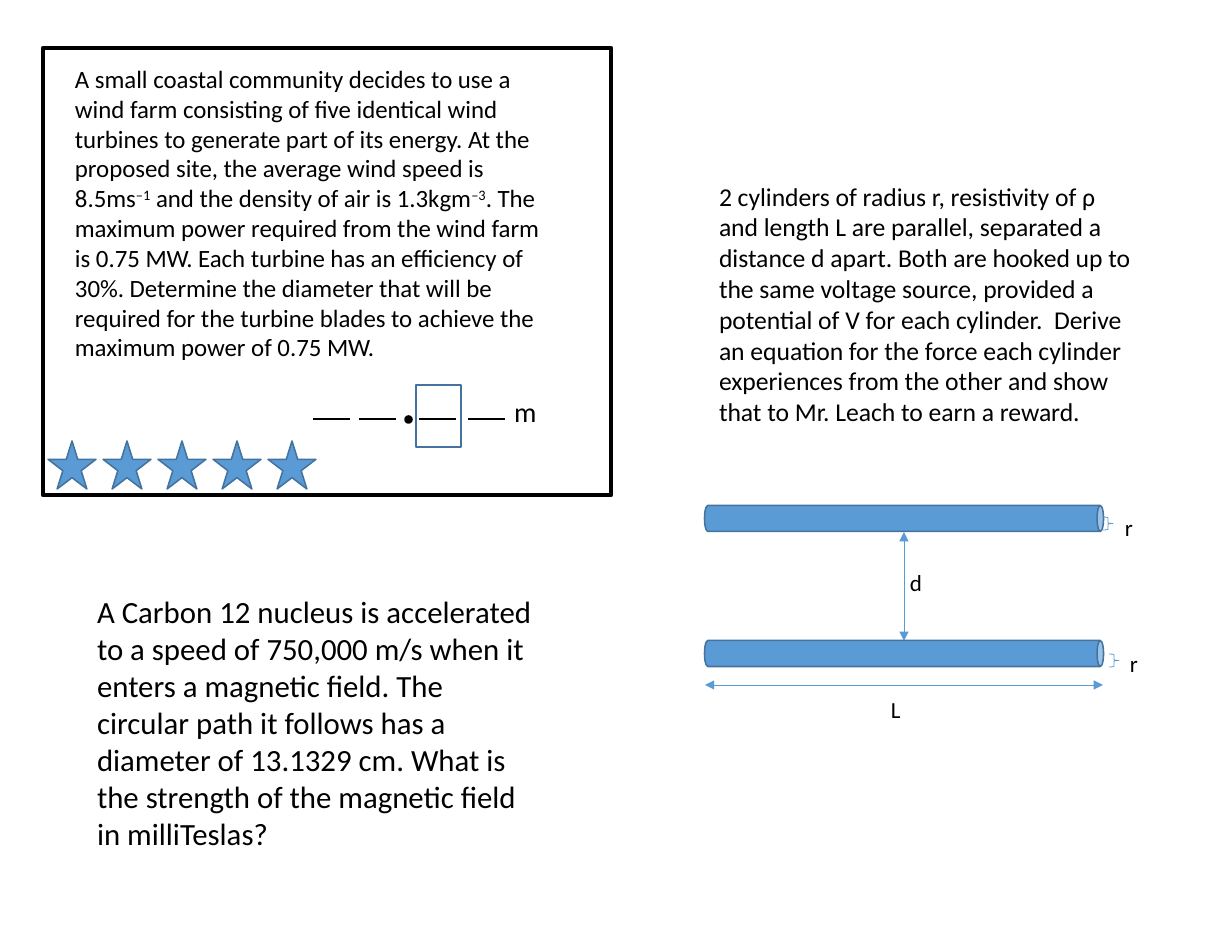
from typing import NamedTuple, Optional

from lxml import etree
from pptx import Presentation
from pptx.dml.color import RGBColor
from pptx.enum.shapes import MSO_CONNECTOR, MSO_SHAPE
from pptx.enum.text import MSO_AUTO_SIZE
from pptx.oxml.ns import qn
from pptx.util import Pt

RECT, STAR, CAN = MSO_SHAPE.RECTANGLE, MSO_SHAPE.STAR_5_POINT, MSO_SHAPE.CAN
OVAL, BRACE = MSO_SHAPE.OVAL, MSO_SHAPE.RIGHT_BRACE
STRAIGHT = MSO_CONNECTOR.STRAIGHT
FIT_TEXT = MSO_AUTO_SIZE.SHAPE_TO_FIT_TEXT

EMU_PER_PX = 914400 / 112
FONT = "Calibri"
COLORS = {"ink": "000000", "blue": "5B9BD5", "edge": "43739E"}


class Box(NamedTuple):
    x: int
    y: int
    w: int
    h: int


class Label(NamedTuple):
    words: str
    box: Box
    size: float
    wrap: bool = True


class Segment(NamedTuple):
    x1: int
    y1: int
    x2: int
    y2: int


WIND_PARTS = [
    ("A small coastal community decides to use a wind farm consisting of five "
     "identical wind turbines to generate part of its energy. At the proposed "
     "site, the average wind speed is 8.5ms", False),
    ("–1", True),
    (" and the density of air is 1.3kgm", False),
    ("–3", True),
    (". The maximum power required from the wind farm is 0.75 MW. Each turbine "
     "has an efficiency of 30%. Determine the diameter that will be required for "
     "the turbine blades to achieve the maximum power of 0.75 MW.", False),
]
NUCLEUS_TEXT = (
    "A Carbon 12 nucleus is accelerated to a speed of 750,000 m/s when it enters "
    "a magnetic field. The circular path it follows has a diameter of 13.1329 cm. "
    "What is the strength of the magnetic field in milliTeslas?")
CYLINDER_TEXT = (
    "2 cylinders of radius r, resistivity of ρ and length L are parallel, "
    "separated a distance d apart. Both are hooked up to the same voltage source, "
    "provided a potential of V for each cylinder.  Derive an equation for the "
    "force each cylinder experiences from the other and show that to Mr. Leach to "
    "earn a reward.")

LABELS = [
    Label(NUCLEUS_TEXT, Box(86, 587, 461, 272), 19.8),
    Label(CYLINDER_TEXT, Box(708, 175, 435, 260), 16.5),
    Label("L", Box(880, 690, 94, 39), 14.8),
    Label("d", Box(899, 563, 94, 39), 14.8),
    Label("r", Box(1114, 508, 94, 39), 14.8),
    Label("r", Box(1119, 644, 94, 39), 14.8),
    Label("m", Box(503, 389, 45, 45), 18, wrap=False),
]
DIMENSIONS = [Segment(904, 532, 904, 641), Segment(1103, 685, 705, 685)]
RADIUS_BRACES = [Box(1103, 517, 10, 13), Box(1109, 654, 10, 13)]
CYLINDERS = [Box(891, top, 26, 399) for top in (319, 454)]
STARS = [Box(48 + 55 * i, 441, 48, 48) for i in range(5)]
ANSWER_BLANKS = [Segment(x, 419, x + 37, 419) for x in (313, 359, 419, 468)]


def px(length: int) -> int:
    return round(length * EMU_PER_PX)


def rgb(name: str) -> RGBColor:
    return RGBColor.from_string(COLORS[name])


def draw_shape(slide, kind, box: Box, line: str, width: float,
               fill: Optional[str] = None, rotation: int = 0) -> None:
    shape = slide.shapes.add_shape(kind, *map(px, box))
    shape.shadow.inherit = False
    shape.rotation = rotation
    if fill:
        shape.fill.solid()
        shape.fill.fore_color.rgb = rgb(fill)
    else:
        shape.fill.background()
    shape.line.color.rgb = rgb(line)
    shape.line.width = Pt(width)


def draw_line(slide, segment: Segment, color: str, width: float,
              arrows: bool = False) -> None:
    connector = slide.shapes.add_connector(STRAIGHT, *map(px, segment))
    connector.line.color.rgb = rgb(color)
    connector.line.width = Pt(width)
    if arrows:
        outline = connector.line._get_or_add_ln()
        for end in ("a:headEnd", "a:tailEnd"):
            etree.SubElement(outline, qn(end), type="triangle")
    etree.SubElement(connector._element.spPr, qn("a:effectLst"))


def add_text_frame(slide, box: Box, wrap: bool = True):
    frame = slide.shapes.add_textbox(*map(px, box)).text_frame
    frame.word_wrap = wrap
    frame.auto_size = FIT_TEXT
    return frame


def format_run(run, size: float) -> None:
    run.font.name = FONT
    run.font.size = Pt(size)
    run.font.color.rgb = rgb("ink")


def draw_label(slide, label: Label) -> None:
    frame = add_text_frame(slide, label.box, label.wrap)
    frame.text = label.words
    format_run(frame.paragraphs[0].runs[0], label.size)


def draw_wind_problem(slide) -> None:
    draw_shape(slide, RECT, Box(43, 48, 568, 447), "ink", 3)
    paragraph = add_text_frame(slide, Box(64, 58, 504, 312)).paragraphs[0]
    for words, raised in WIND_PARTS:
        run = paragraph.add_run()
        run.text = words
        format_run(run, 16)
        if raised:
            run._r.get_or_add_rPr().set("baseline", "30000")
    for star in STARS:
        draw_shape(slide, STAR, star, "edge", 1, "blue")
    for blank in ANSWER_BLANKS:
        draw_line(slide, blank, "ink", 1)
    draw_shape(slide, OVAL, Box(405, 416, 7, 7), "ink", 1, "ink")
    draw_shape(slide, RECT, Box(416, 385, 45, 62), "edge", 1)


def draw_cylinder_diagram(slide) -> None:
    for cylinder in CYLINDERS:
        draw_shape(slide, CAN, cylinder, "edge", 1, "blue", rotation=90)
    for dimension in DIMENSIONS:
        draw_line(slide, dimension, "blue", 0.5, arrows=True)
    for brace in RADIUS_BRACES:
        draw_shape(slide, BRACE, brace, "blue", 0.5)


def main() -> None:
    deck = Presentation()
    deck.slide_width, deck.slide_height = px(1232), px(952)
    slide = deck.slides.add_slide(deck.slide_layouts[6])
    draw_wind_problem(slide)
    draw_cylinder_diagram(slide)
    for label in LABELS:
        draw_label(slide, label)
    deck.save("out.pptx")


if __name__ == "__main__":
    main()
